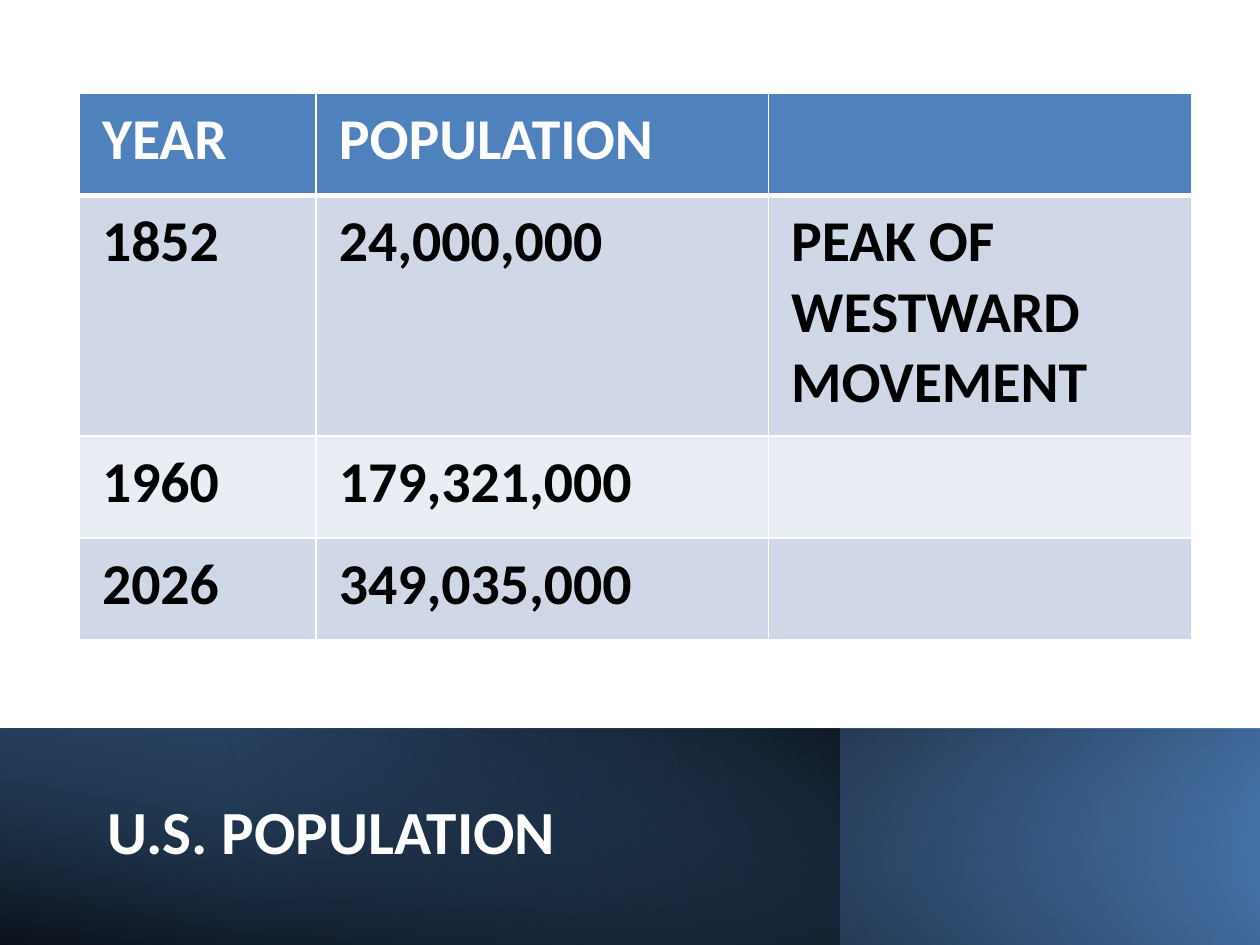
"""Build the U.S. population slide."""
from lxml import etree
from pptx import Presentation
from pptx.dml import color
from pptx.enum import shapes, text
from pptx.oxml import ns
from pptx.util import Inches, Pt

COLORS = {
    "white": "FFFFFF",
    "black": "000000",
    "blue": "4F81BD",
    "deep_blue": "376092",
    "band_dark": "D0D8E8",
    "band_light": "E9EDF4",
}
BAND_TOP, BAND_HEIGHT = 5.78, 1.74
BANDS = [
    (10, 140, [(34, "black", 96), (100, "blue", 100)]),
    (6.66, 190, [(28, "deep_blue", 59), (100, "black", 70)]),
    (10, 260, [(0, "black", 72), (100, "blue", 0)]),
]
COLUMN_WIDTHS = [1.88, 3.59, 3.36]
ROW_HEIGHTS = [0.81, 1.91, 0.81, 0.81]
POPULATION_ROWS = [
    ("YEAR", "POPULATION", ""),
    ("1852", "24,000,000", "PEAK OF WESTWARD MOVEMENT"),
    ("1960", "179,321,000", ""),
    ("2026", "349,035,000", ""),
]
CELL_FORMAT = {
    "margin_left": Inches(0.18),
    "margin_right": Inches(0.18),
    "margin_top": Inches(0.09),
    "margin_bottom": Inches(0.09),
}


def rgb(name):
    """Return the named colour."""
    return color.RGBColor.from_string(COLORS[name])


def apply_format(target, values):
    """Set each attribute in values on target."""
    for attribute, value in values.items():
        setattr(target, attribute, value)


def style_font(font, size, color_name):
    """Make a font bold Calibri in the given size and colour."""
    apply_format(font, {"name": "Calibri", "size": Pt(size), "bold": True})
    font.color.rgb = rgb(color_name)


def add_band(slide, width, angle, stops):
    """Add one mirrored, translucent gradient band to the footer."""
    band = slide.shapes.add_shape(
        shapes.MSO_SHAPE.RECTANGLE,
        Inches(0), Inches(BAND_TOP), Inches(width), Inches(BAND_HEIGHT))
    band.shadow.inherit = False
    band.line.fill.background()
    band.fill.gradient()
    band.fill.gradient_angle = 360 - angle
    properties = band._element.spPr
    properties.find(ns.qn("a:xfrm")).set("flipH", "1")
    for stop, (position, color_name, _) in zip(band.fill.gradient_stops, stops):
        stop.position = position / 100
        stop.color.rgb = rgb(color_name)
    tints = properties.iter(ns.qn("a:srgbClr"))
    for tint, (_, _, opacity) in zip(list(tints), stops):
        etree.SubElement(tint, ns.qn("a:alpha"), val=str(opacity * 1000))


def add_title(slide, wording):
    """Place the title over the footer bands."""
    title = slide.shapes.title
    slide.shapes._spTree.append(title._element)
    apply_format(title, {
        "left": Inches(0.75), "top": Inches(5.99),
        "width": Inches(5.71), "height": Inches(1.27)})
    title.text_frame.text = wording
    apply_format(title.text_frame, {
        "vertical_anchor": text.MSO_ANCHOR.MIDDLE, "word_wrap": True})
    heading = title.text_frame.paragraphs[0]
    apply_format(heading, {
        "alignment": text.PP_ALIGN.LEFT,
        "line_spacing": 0.9, "space_after": Pt(6)})
    style_font(heading.runs[0].font, 35, "white")


def add_borders(cell, widths):
    """Draw white cell borders from a dict of side to points."""
    properties = cell._tc.get_or_add_tcPr()
    for index, (side, width) in enumerate(widths.items()):
        border = etree.Element(ns.qn(f"a:ln{side}"), w=str(Pt(width)))
        fill = etree.SubElement(border, ns.qn("a:solidFill"))
        etree.SubElement(fill, ns.qn("a:srgbClr"), val=COLORS["white"])
        properties.insert(index, border)


def fill_cell(cell, wording, row):
    """Write and format one table cell according to its row."""
    fill_name = "blue" if row == 0 else ("band_light", "band_dark")[row % 2]
    apply_format(cell, CELL_FORMAT)
    cell.fill.solid()
    cell.fill.fore_color.rgb = rgb(fill_name)
    cell.text = wording
    for run in cell.text_frame.paragraphs[0].runs:
        style_font(run.font, 33, "black" if row else "white")
    add_borders(cell, {
        "L": 1, "R": 1, "T": 3 if row == 1 else 1, "B": 3 if row == 0 else 1})


def add_population_table(slide):
    """Add the table of population by year."""
    table = slide.shapes.add_table(
        len(ROW_HEIGHTS), len(COLUMN_WIDTHS), Inches(0.63), Inches(0.74),
        Inches(sum(COLUMN_WIDTHS)), Inches(sum(ROW_HEIGHTS))).table
    for column, width in zip(table.columns, COLUMN_WIDTHS):
        column.width = Inches(width)
    for row, (height, wordings) in enumerate(zip(ROW_HEIGHTS, POPULATION_ROWS)):
        table.rows[row].height = Inches(height)
        for column, wording in enumerate(wordings):
            fill_cell(table.cell(row, column), wording, row)


def main():
    """Build and save the presentation."""
    deck = Presentation()
    apply_format(deck, {"slide_width": Inches(10), "slide_height": Inches(7.5)})
    slide = deck.slides.add_slide(deck.slide_layouts[5])
    slide.background.fill.solid()
    slide.background.fill.fore_color.rgb = rgb("white")
    for width, angle, stops in BANDS:
        add_band(slide, width, angle, stops)
    add_title(slide, "U.S. POPULATION")
    add_population_table(slide)
    deck.save("out.pptx")


if __name__ == "__main__":
    main()
